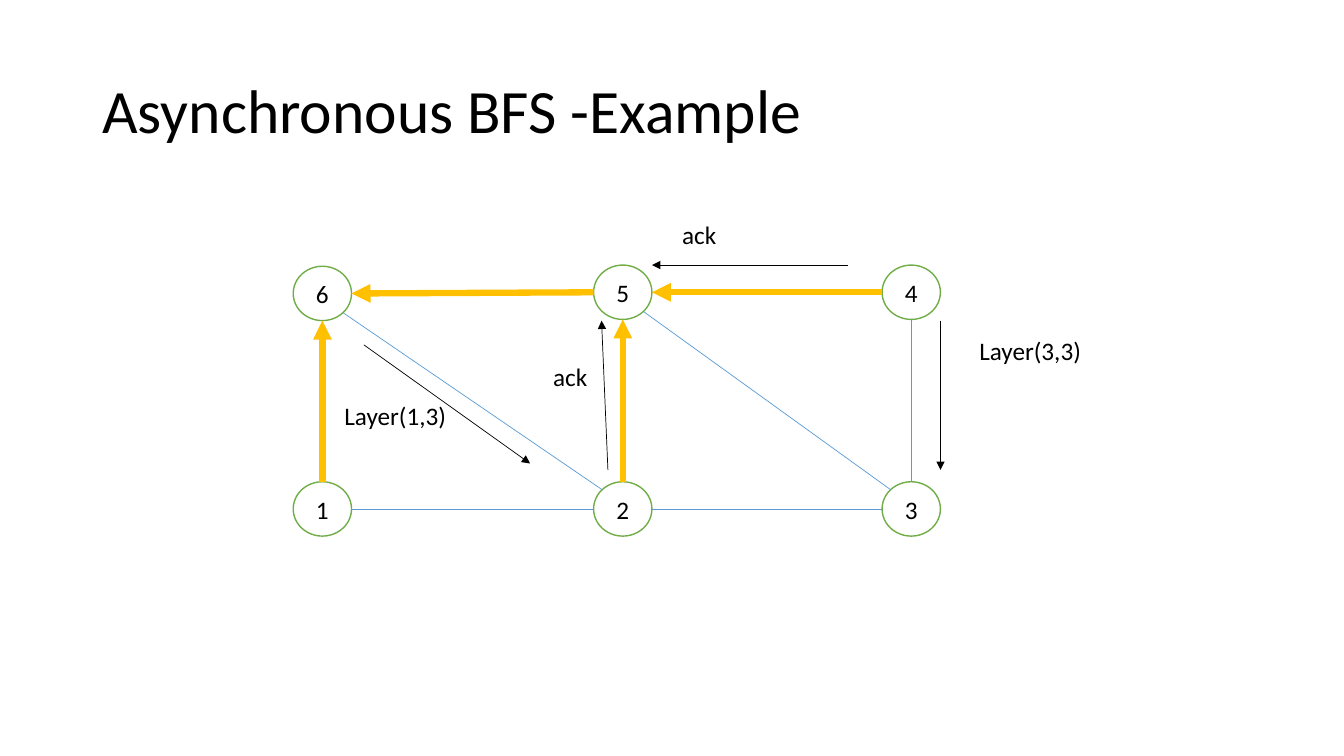
from dataclasses import dataclass
from math import copysign, sqrt

from lxml import etree
from pptx import Presentation
from pptx import util as u
from pptx.dml.color import RGBColor as Rgb
from pptx.enum import shapes, text
from pptx.oxml.ns import qn


@dataclass(frozen=True)
class Theme:
    font: str = "Calibri"
    ink: Rgb = Rgb(0x00, 0x00, 0x00)
    paper: Rgb = Rgb(0xFF, 0xFF, 0xFF)
    ring: Rgb = Rgb(0x70, 0xAD, 0x47)
    edge: Rgb = Rgb(0x5B, 0x9B, 0xD5)
    tree: Rgb = Rgb(0xFF, 0xC0, 0x00)
    title: int = 44
    body: int = 18
    thin: float = 0.5
    rim: float = 1
    thick: float = 4.5


class Board:
    def __init__(self, slide, theme):
        self.slide = slide
        self.theme = theme
        self.nodes = {}

    def style(self, frame, words, size):
        para = frame.paragraphs[0]
        para.text = words
        para.font.name = self.theme.font
        para.font.size = u.Pt(size)
        para.font.color.rgb = self.theme.ink
        return para

    def box(self, words, x, y, w, h, size):
        frame = self.slide.shapes.add_textbox(
            u.Cm(x), u.Cm(y), u.Cm(w), u.Cm(h)).text_frame
        frame.word_wrap = True
        return frame, self.style(frame, words, size)

    def title(self, words, x, y, w, h):
        frame, para = self.box(words, x, y, w, h, self.theme.title)
        frame.vertical_anchor = text.MSO_ANCHOR.MIDDLE
        para.line_spacing = 0.9

    def label(self, words, x, y, w):
        frame, _ = self.box(words, x, y, w, 1.02, self.theme.body)
        frame.auto_size = text.MSO_AUTO_SIZE.SHAPE_TO_FIT_TEXT

    def node(self, name, x, y, w=1.47, h=1.37):
        oval = self.slide.shapes.add_shape(
            shapes.MSO_SHAPE.OVAL, u.Cm(x), u.Cm(y), u.Cm(w), u.Cm(h))
        oval.shadow.inherit = False
        oval.fill.solid()
        oval.fill.fore_color.rgb = self.theme.paper
        oval.line.color.rgb = self.theme.ring
        oval.line.width = u.Pt(self.theme.rim)
        frame = oval.text_frame
        frame.vertical_anchor = text.MSO_ANCHOR.MIDDLE
        self.style(frame, name, self.theme.body).alignment = text.PP_ALIGN.CENTER
        self.nodes[name] = (x + w / 2, y + h / 2, w / 2, h / 2)

    def rim(self, name, other):
        x, y, rx, ry = self.nodes[name]
        gap_x, gap_y = (b - a for a, b in zip((x, y), self.nodes[other]))
        dx = copysign(1, gap_x) if abs(gap_x) > 1 else 0
        dy = copysign(1, gap_y) if abs(gap_y) > 1 else 0
        norm = sqrt(dx * dx + dy * dy)
        return x + rx * dx / norm, y + ry * dy / norm

    def line(self, start, end, color, width, arrow=False):
        link = self.slide.shapes.add_connector(
            shapes.MSO_CONNECTOR.STRAIGHT, *(u.Cm(v) for v in (*start, *end)))
        link.line.color.rgb = color
        link.line.width = u.Pt(width)
        props = link._element.spPr
        if arrow:
            etree.SubElement(props.get_or_add_ln(), qn("a:tailEnd"),
                             type="triangle")
        etree.SubElement(props, qn("a:effectLst"))

    def edge(self, a, b):
        self.line(self.rim(a, b), self.rim(b, a),
                  self.theme.edge, self.theme.thin)

    def branch(self, child, parent):
        self.line(self.rim(child, parent), self.rim(parent, child),
                  self.theme.tree, self.theme.thick, True)

    def message(self, words, start, end, x, y, w):
        self.line(start, end, self.theme.ink, self.theme.thin, True)
        self.label(words, x, y, w)


def main():
    deck = Presentation()
    deck.slide_width, deck.slide_height = u.Cm(33.87), u.Cm(19.05)
    board = Board(deck.slides.add_slide(deck.slide_layouts[6]), Theme())

    board.title("Asynchronous BFS -Example", 2.33, 1.01, 29.21, 3.68)

    left, mid, right = 7.39, 14.96, 22.23
    top, low = 6.68, 12.14
    for name, x, y in (("1", left, low), ("5", mid, top), ("2", mid, low),
                       ("4", right, top), ("3", right, low),
                       ("6", left, top + 0.03)):
        board.node(name, x, y)

    for child, parent in ("56", "16", "25", "45"):
        board.branch(child, parent)
    for a, b in ("12", "43", "23", "62", "53"):
        board.edge(a, b)

    board.message("ack", (15.32, 11.84), (15.16, 8.08), 13.69, 8.97, 3.25)
    board.message("ack", (21.36, top), (16.43, top), 16.94, 5.41, 3.25)
    board.message("Layer(3,3)", (23.7, 8.08), (23.7, 11.84), 24.43, 8.33, 3.66)
    board.message("Layer(1,3)", (9.17, 8.69), (13.36, 11.68), 8.43, 9.96, 3.48)

    deck.save("out.pptx")


if __name__ == "__main__":
    main()
